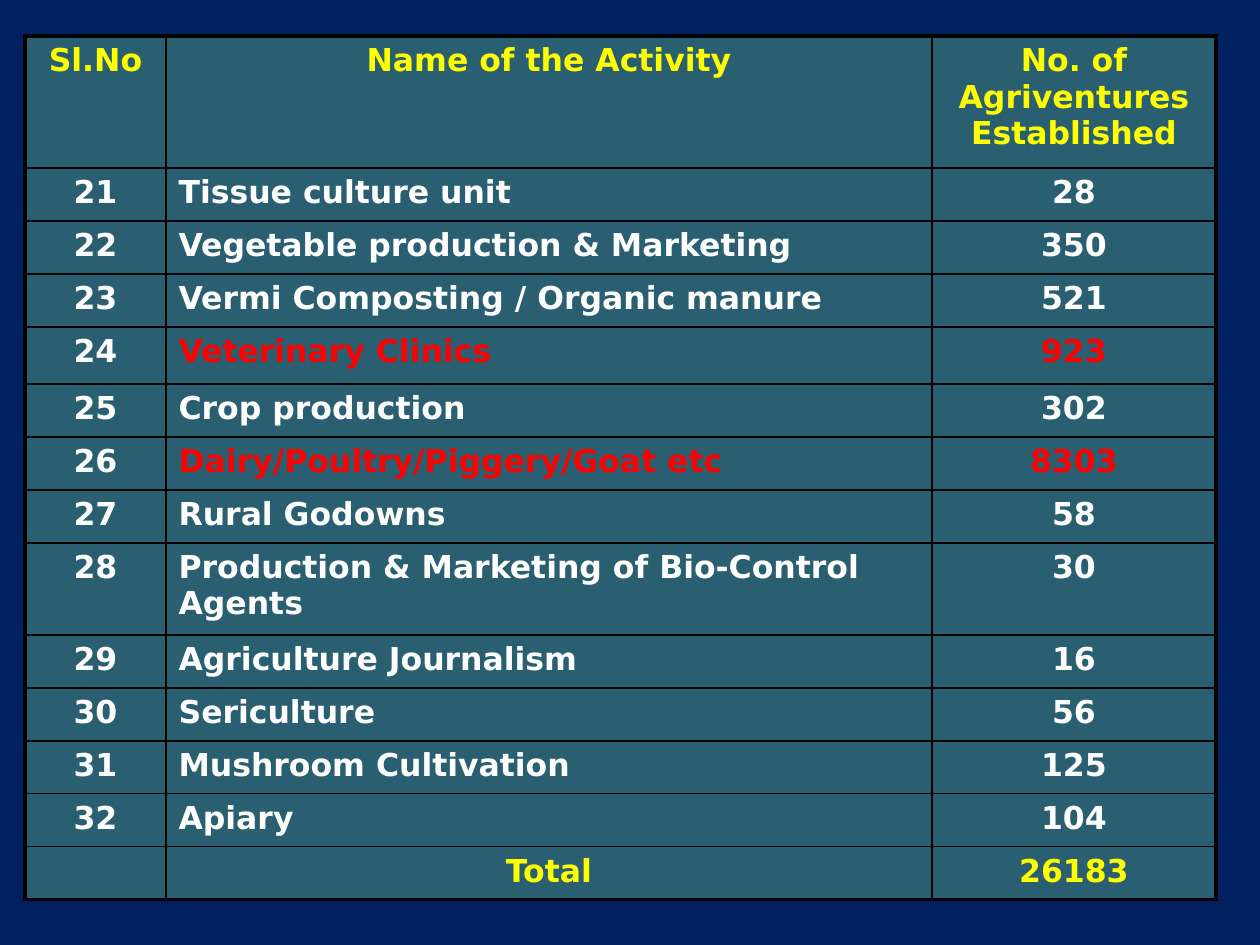
"""Build the slide that tabulates agriventures by activity."""
from dataclasses import dataclass

from lxml.etree import SubElement
from pptx import Presentation
from pptx.dml.color import RGBColor
from pptx.enum.text import PP_ALIGN
from pptx.oxml.ns import qn
from pptx.util import Inches, Pt

PIXELS_PER_INCH = 126

HEADINGS = ("Sl.No", "Name of the Activity", "No. of Agriventures Established")
FIRST_NUMBER = 21
ACTIVITIES = (
    ("Tissue culture unit", 28),
    ("Vegetable production & Marketing", 350),
    ("Vermi Composting / Organic manure", 521),
    ("Veterinary Clinics", 923),
    ("Crop production", 302),
    ("Dairy/Poultry/Piggery/Goat etc", 8303),
    ("Rural Godowns", 58),
    ("Production & Marketing of Bio-Control Agents", 30),
    ("Agriculture Journalism", 16),
    ("Sericulture", 56),
    ("Mushroom Cultivation", 125),
    ("Apiary", 104),
)
HIGHLIGHTED = {"Veterinary Clinics", "Dairy/Poultry/Piggery/Goat etc"}
TOTAL = ("", "Total", "26183")

COLUMN_WIDTHS = (141, 766, 284)
ROW_HEIGHT = 53
SPECIAL_HEIGHTS = {0: 132, 4: 57, 8: 92}


@dataclass(frozen=True)
class Theme:
    """Colours, type and line sizes of the slide."""

    background: str = "002060"
    cell: str = "295F71"
    border: str = "000000"
    accent: str = "FFFF00"
    body: str = "FFFFFF"
    highlight: str = "FF0000"
    font: str = "DejaVu Sans"
    text_size: float = 18
    space_before: float = 2.5
    inner_line: float = 1
    outer_line: float = 2.25


def px(length):
    """Turn whole pixels into EMU."""
    return round(length * Inches(1) / PIXELS_PER_INCH)


class SlideBuilder:
    """Hold the theme and the current slide, and add elements to it."""

    def __init__(self, slide, theme):
        """Keep the slide and theme, and paint the background."""
        self.slide = slide
        self.theme = theme
        fill = slide.background.fill
        fill.solid()
        fill.fore_color.rgb = RGBColor.from_string(theme.background)

    def add_table(self, left, top, widths, heights):
        """Add a table with the given column widths and row heights."""
        frame = self.slide.shapes.add_table(
            len(heights), len(widths), px(left), px(top), px(sum(widths)), px(sum(heights))
        )
        table = frame.table
        for column, width in zip(table.columns, widths):
            column.width = px(width)
        for row, height in zip(table.rows, heights):
            row.height = px(height)
        return table

    def fill_row(self, table, row, texts, colors, alignments):
        """Write and style the cells of one row."""
        last_row, last_column = len(table.rows) - 1, len(table.columns) - 1
        for column, (text, color, alignment) in enumerate(zip(texts, colors, alignments)):
            cell = table.cell(row, column)
            outer_sides = {
                "L": column == 0,
                "R": column == last_column,
                "T": row == 0,
                "B": row == last_row,
            }
            self.style_cell(cell, outer_sides)
            if text:
                self.write_cell(cell, text, color, alignment)

    def style_cell(self, cell, outer_sides):
        """Draw the four borders of a cell and fill it."""
        properties = cell._tc.get_or_add_tcPr()
        for side, is_outer in outer_sides.items():
            width = self.theme.outer_line if is_outer else self.theme.inner_line
            line = SubElement(properties, qn(f"a:ln{side}"), w=str(Pt(width)))
            SubElement(SubElement(line, qn("a:solidFill")), qn("a:srgbClr"), val=self.theme.border)
        cell.fill.solid()
        cell.fill.fore_color.rgb = RGBColor.from_string(self.theme.cell)

    def write_cell(self, cell, text, color, alignment):
        """Write one bold run into a cell."""
        paragraph = cell.text_frame.paragraphs[0]
        paragraph.alignment = alignment
        paragraph.space_before = Pt(self.theme.space_before)
        run = paragraph.add_run()
        run.text = text
        run.font.name = self.theme.font
        run.font.size = Pt(self.theme.text_size)
        run.font.bold = True
        run.font.color.rgb = RGBColor.from_string(color)


def main():
    """Build and save the presentation."""
    presentation = Presentation()
    presentation.slide_width, presentation.slide_height = px(1260), px(945)
    theme = Theme()
    builder = SlideBuilder(presentation.slides.add_slide(presentation.slide_layouts[6]), theme)

    heights = [SPECIAL_HEIGHTS.get(row, ROW_HEIGHT) for row in range(len(ACTIVITIES) + 2)]
    table = builder.add_table(25, 36, COLUMN_WIDTHS, heights)

    centered = (PP_ALIGN.CENTER,) * 3
    body_alignments = (PP_ALIGN.CENTER, PP_ALIGN.LEFT, PP_ALIGN.CENTER)
    accents = (theme.accent,) * 3
    builder.fill_row(table, 0, HEADINGS, accents, centered)
    for row, (activity, count) in enumerate(ACTIVITIES, start=1):
        color = theme.highlight if activity in HIGHLIGHTED else theme.body
        texts = (str(FIRST_NUMBER + row - 1), activity, str(count))
        builder.fill_row(table, row, texts, (theme.body, color, color), body_alignments)
    builder.fill_row(table, len(heights) - 1, TOTAL, accents, centered)

    presentation.save("out.pptx")


if __name__ == "__main__":
    main()
